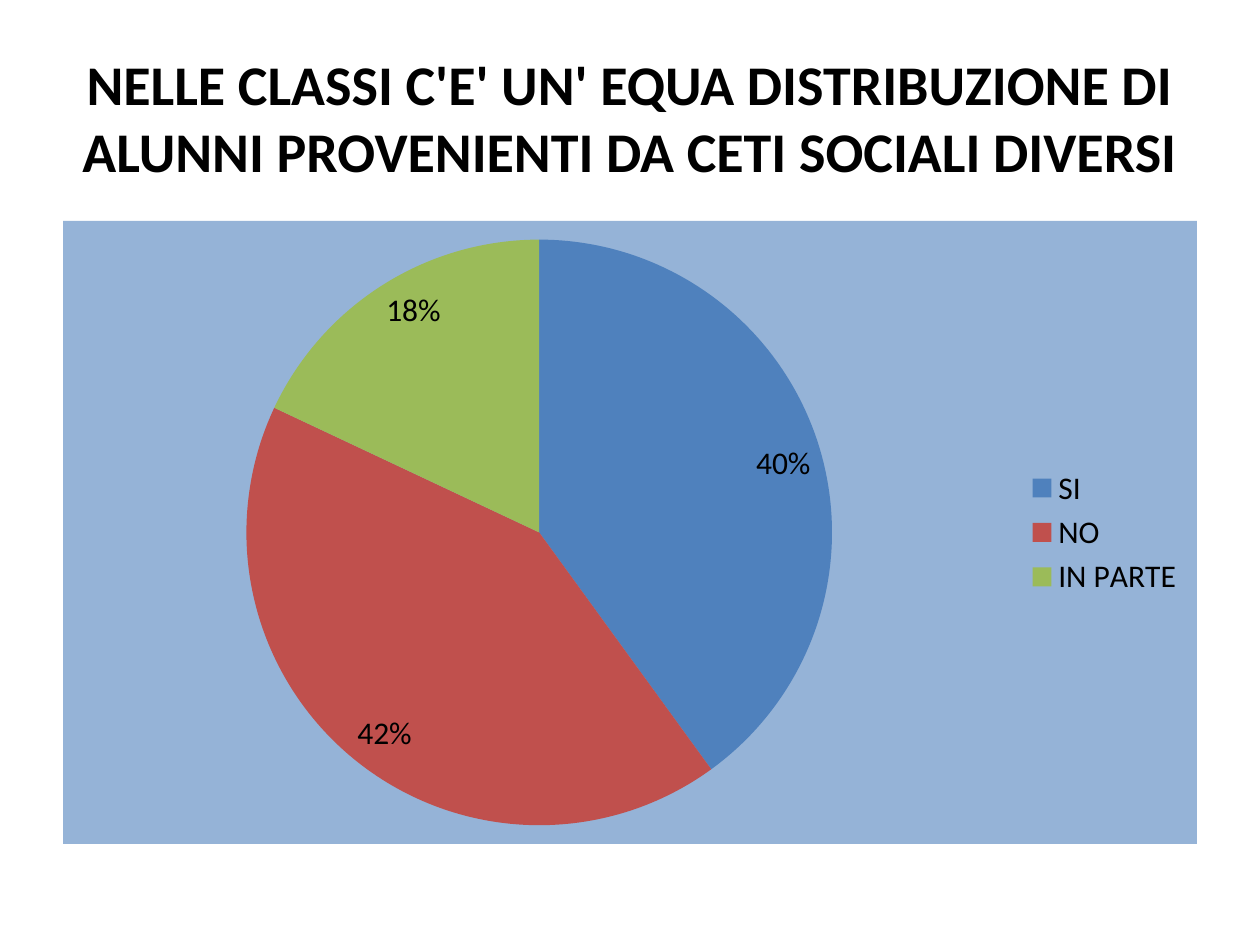
"""Build a slide with a pie chart on the social mix of school classes."""
from lxml import etree
from pptx import Presentation
from pptx.chart.data import CategoryChartData
from pptx.dml.color import RGBColor
from pptx.enum.chart import XL_CHART_TYPE as ChartType
from pptx.enum.chart import XL_LABEL_POSITION as LabelPosition
from pptx.enum.chart import XL_LEGEND_POSITION as LegendPosition
from pptx.enum.text import MSO_ANCHOR, PP_ALIGN
from pptx.oxml import parse_xml
from pptx.oxml.ns import nsdecls, qn
from pptx.util import Pt

PX = 914400 // 126
FONT = "Calibri"
ANSWERS = [("SI", 0.40, "4F81BD"), ("NO", 0.42, "C0504D"), ("IN PARTE", 0.18, "9BBB59")]


def color(value):
    return RGBColor.from_string(value)


def set_font(font, size, bold):
    font.name = FONT
    font.size = Pt(size)
    font.bold = bold
    font.color.rgb = color("000000")


presentation = Presentation()
presentation.slide_width = 1260 * PX
presentation.slide_height = 945 * PX
slide = presentation.slides.add_slide(presentation.slide_layouts[5])

title = slide.shapes.title
title.left, title.top, title.width, title.height = (n * PX for n in (63, 38, 1134, 157))
title.text_frame.text = "NELLE CLASSI C'E' UN' EQUA DISTRIBUZIONE DI ALUNNI PROVENIENTI DA CETI SOCIALI DIVERSI"
title.text_frame.word_wrap = True
title.text_frame.vertical_anchor = MSO_ANCHOR.MIDDLE
paragraph = title.text_frame.paragraphs[0]
paragraph.alignment = PP_ALIGN.CENTER
set_font(paragraph.runs[0].font, 32, True)

chart_data = CategoryChartData(number_format="0%")
chart_data.categories = [name for name, share, fill in ANSWERS]
chart_data.add_series("Series 1", [share for name, share, fill in ANSWERS])
frame = slide.shapes.add_chart(
    ChartType.PIE, 63 * PX, 221 * PX, 1134 * PX, 623 * PX, chart_data)
chart = frame.chart
chart.has_title = False
set_font(chart.font, 18, False)
chart.has_legend = True
chart.legend.position = LegendPosition.RIGHT
chart.legend.include_in_layout = False

plot = chart.plots[0]
plot.vary_by_categories = True
for index, (name, share, fill) in enumerate(ANSWERS):
    point = plot.series[0].points[index]
    point.format.fill.solid()
    point.format.fill.fore_color.rgb = color(fill)
plot.has_data_labels = True
labels = plot.data_labels
labels.show_value = True
labels.show_percentage = False
labels.number_format = "0%"
labels.number_format_is_linked = False
labels.position = LabelPosition.INSIDE_END
set_font(labels.font, 18, False)

background = parse_xml(
    f'<c:spPr {nsdecls("c", "a")}><a:solidFill><a:srgbClr val="95B3D7"/></a:solidFill>'
    '<a:ln><a:noFill/></a:ln></c:spPr>')
chart.element.find(qn("c:txPr")).addprevious(background)

plot_area = chart.element.find(qn("c:chart")).find(qn("c:plotArea"))
for old_layout in plot_area.findall(qn("c:layout")):
    plot_area.remove(old_layout)
layout = etree.Element(qn("c:layout"))
manual = etree.SubElement(layout, qn("c:manualLayout"))
settings = [("layoutTarget", "inner"), ("xMode", "edge"), ("yMode", "edge"),
            ("x", "0.16"), ("y", "0.03"), ("w", "0.52"), ("h", "0.94")]
for tag, value in settings:
    etree.SubElement(manual, qn(f"c:{tag}")).set("val", value)
plot_area.insert(0, layout)

presentation.save("out.pptx")
